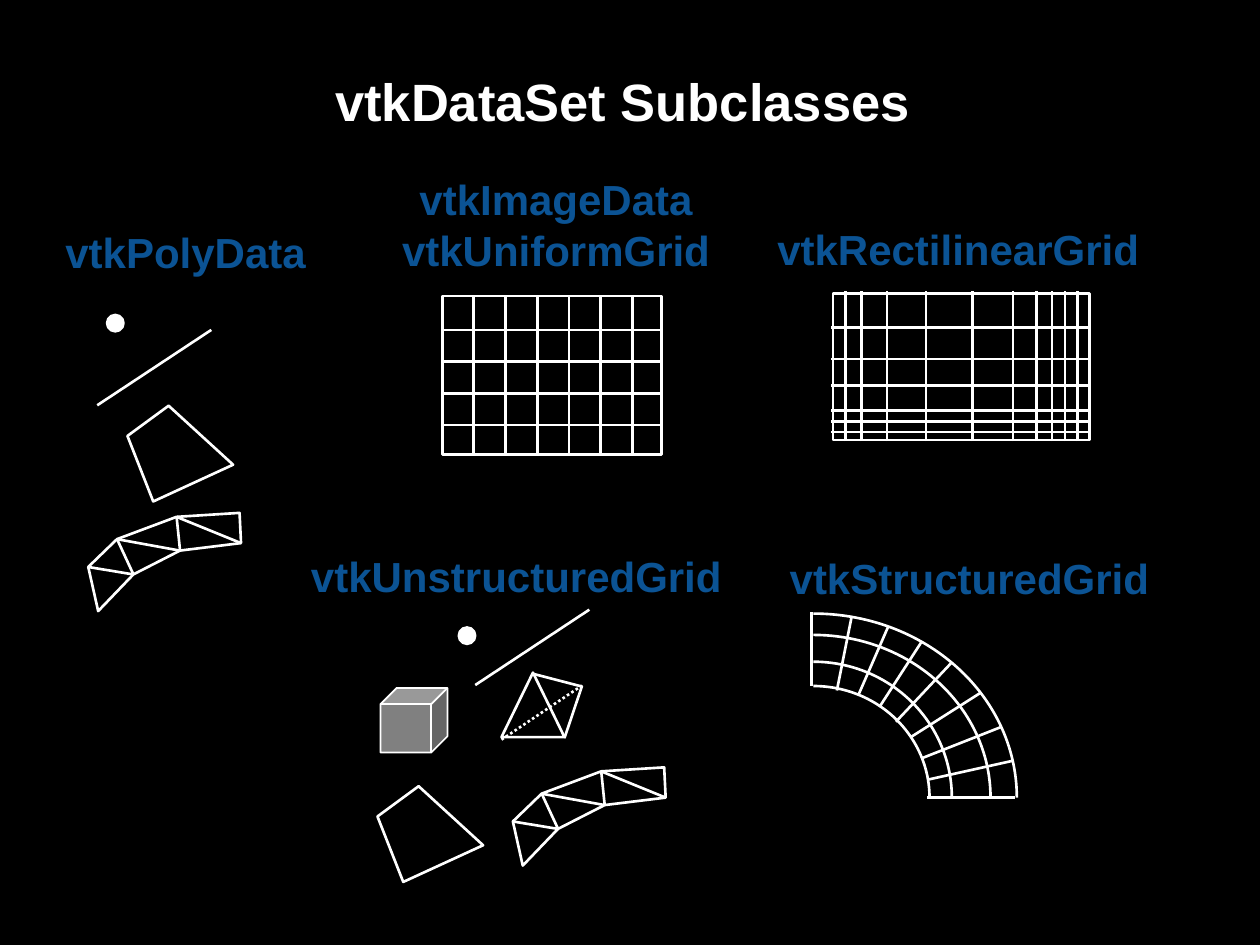
from itertools import pairwise

from lxml import etree
from pptx import Presentation
from pptx.dml.color import RGBColor
from pptx.enum import dml, shapes, text
from pptx.oxml.ns import qn
from pptx.util import Cm, Pt

COLORS = {"background": "000000", "ink": "FFFFFF", "label": "0B5394", "cube": "808080"}
COLORS = {name: RGBColor.from_string(value) for name, value in COLORS.items()}
SHAPE = shapes.MSO_SHAPE

presentation = Presentation()
presentation.slide_width, presentation.slide_height = Cm(25.4), Cm(19.05)
slide = presentation.slides.add_slide(presentation.slide_layouts[5])
slide.background.fill.solid()
slide.background.fill.fore_color.rgb = COLORS["background"]


def add_line(x1, y1, x2, y2):
    line = slide.shapes.add_connector(
        shapes.MSO_CONNECTOR.STRAIGHT, Cm(x1), Cm(y1), Cm(x2), Cm(y2))
    line.line.color.rgb = COLORS["ink"]
    line.line.width = Pt(1.5)
    etree.SubElement(line._element.spPr, qn("a:effectLst"))
    return line


def add_outline(points, close=True):
    """Draw an unfilled polygon, or an open polyline, through points in cm."""
    start, *others = [(Cm(x), Cm(y)) for x, y in points]
    builder = slide.shapes.build_freeform(*start)
    builder.add_line_segments(others, close=close)
    outline = builder.convert_to_shape()
    outline.shadow.inherit = False
    outline.fill.background()
    outline.line.color.rgb = COLORS["ink"]
    outline.line.width = Pt(1.5)


# Title
title = slide.shapes.title
title.left, title.top, title.width, title.height = Cm(1.27), Cm(0.43), Cm(22.86), Cm(3.18)
title.text_frame.vertical_anchor = text.MSO_ANCHOR.MIDDLE
paragraph = title.text_frame.paragraphs[0]
paragraph.alignment = text.PP_ALIGN.CENTER
run = paragraph.add_run()
run.text = "vtkDataSet Subclasses "
run.font.name, run.font.size, run.font.bold = "Arial", Pt(30), True
run.font.color.rgb = COLORS["ink"]

# Class names
labels = [
    (["vtkPolyData"], 1.07, 4.45, 5.41, 1.3),
    (["vtkImageData", "vtkUniformGrid"], 7.82, 3.38, 6.78, 2.31),
    (["vtkRectilinearGrid"], 15.42, 4.39, 7.82, 1.27),
    (["vtkUnstructuredGrid"], 6.02, 10.97, 8.79, 1.27),
    (["vtkStructuredGrid"], 15.67, 11.02, 7.77, 1.27),
]
for names, *box in labels:
    frame = slide.shapes.add_textbox(*map(Cm, box)).text_frame
    frame.word_wrap = False
    frame.auto_size = text.MSO_AUTO_SIZE.SHAPE_TO_FIT_TEXT
    for index, name in enumerate(names):
        paragraph = frame.add_paragraph() if index else frame.paragraphs[0]
        if len(names) > 1:
            paragraph.alignment = text.PP_ALIGN.CENTER
        run = paragraph.add_run()
        run.text = name
        run.font.name, run.font.size, run.font.bold = "Arial", Pt(24), True
        run.font.color.rgb = COLORS["label"]

# Preset shapes: the arcs are quarter ellipses around one centre
center_x, center_y = 16.4, 16.08
arc_radii = [(4.1, 3.71), (3.57, 3.28), (2.79, 2.74), (2.34, 2.25)]
presets = [
    (SHAPE.RECTANGLE, 8.92, 5.97, 4.42, 3.2, None, 1.5),
    (SHAPE.RECTANGLE, 16.79, 5.92, 5.18, 2.95, None, 1.5),
    (SHAPE.OVAL, 2.16, 6.35, 0.33, 0.33, "ink", 1.5),
    (SHAPE.OVAL, 9.25, 12.65, 0.33, 0.33, "ink", 1.5),
    (SHAPE.ISOSCELES_TRIANGLE, 10.11, 13.56, 1.27, 1.3, None, 1.5),
    (SHAPE.CUBE, 7.67, 13.87, 1.35, 1.3, "cube", 1),
]
presets += [(SHAPE.ARC, center_x - rx, center_y - ry, 2 * rx, 2 * ry, None, 1.5)
            for rx, ry in arc_radii]
for kind, left, top, width, height, fill, line_width in presets:
    shape = slide.shapes.add_shape(kind, Cm(left), Cm(top), Cm(width), Cm(height))
    shape.shadow.inherit = False
    if fill:
        shape.fill.solid()
        shape.fill.fore_color.rgb = COLORS[fill]
    else:
        shape.fill.background()
    shape.line.color.rgb = COLORS["ink"]
    shape.line.width = Pt(line_width)

# Uniform and rectilinear grid lines
grids = [
    ([9.55 + 0.64 * i for i in range(6)], 5.99, 9.19,
     [6.65 + 0.64 * i for i in range(4)], 8.92, 13.36),
    ([17.04, 17.37, 17.88, 18.67, 19.61, 20.42, 20.9, 21.21, 21.47, 21.72], 5.87, 8.89,
     [6.6, 7.24, 7.77, 8.28, 8.5, 8.71], 16.76, 21.97),
]
for columns, top, bottom, rows, left, right in grids:
    for x in columns:
        add_line(x, bottom, x, top)
    for y in rows:
        add_line(left, y, right, y)

# Cells shared by poly data and unstructured grid
quad = [(0.83, 0), (0, 0.61), (0.52, 1.93), (2.13, 1.19)]
strip = [(0, 1.09), (0.58, 0.53), (1.78, 0.08), (3.05, 0),
         (3.08, 0.61), (1.85, 0.76), (0.91, 1.24), (0.2, 1.98)]
strip_path = [0, 6, 1, 5, 2, 4]  # zigzag of inner edges
cell_origins = [
    ((1.96, 6.65), (2.57, 8.18), (1.78, 10.34)),
    ((9.58, 12.29), (7.61, 15.85), (10.34, 15.47)),
]
for (line_x, line_y), (quad_x, quad_y), (strip_x, strip_y) in cell_origins:
    add_line(line_x, line_y + 1.52, line_x + 2.3, line_y)
    add_outline([(quad_x + x, quad_y + y) for x, y in quad])
    strip_points = [(strip_x + x, strip_y + y) for x, y in strip]
    add_outline(strip_points)
    for start, end in pairwise(strip_path):
        add_line(*strip_points[start], *strip_points[end])

# Tetrahedron: side face and hidden edge
add_outline([(10.77, 13.59), (11.73, 13.84), (11.38, 14.88)], close=False)
hidden_edge = add_line(10.11, 14.91, 11.73, 13.82)
hidden_edge.line.dash_style = dml.MSO_LINE.ROUND_DOT

# Spokes of the structured grid
spokes = [
    (16.36, 13.82, 16.36, 12.34), (16.87, 13.92, 17.17, 12.42),
    (17.3, 14.02, 17.91, 12.62), (17.73, 14.25, 18.57, 12.95),
    (18.06, 14.55, 19.18, 13.36), (18.36, 14.86, 19.76, 13.97),
    (18.57, 15.29, 20.17, 14.66), (18.69, 15.72, 20.4, 15.34),
    (18.69, 16.08, 20.47, 16.08),
]
for spoke in spokes:
    add_line(*spoke)

presentation.save("out.pptx")
